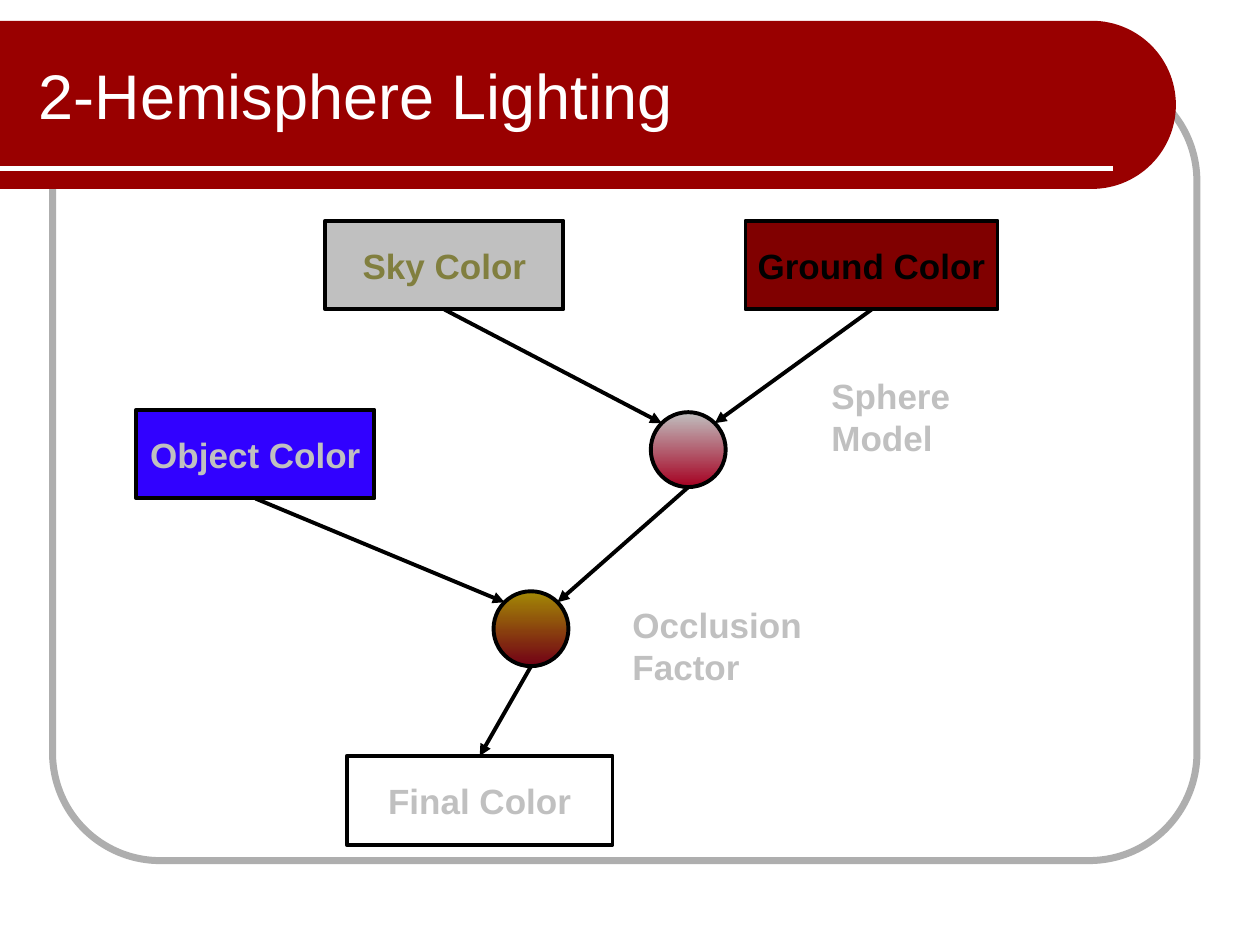
from math import cos, pi, sin, sqrt

from lxml.etree import SubElement
from pptx import Presentation
from pptx.dml.color import RGBColor
from pptx.enum.shapes import MSO_CONNECTOR as Connector, MSO_SHAPE as Shape
from pptx.enum.text import MSO_ANCHOR as Anchor, PP_ALIGN as Align
from pptx.oxml.ns import qn
from pptx.util import Cm, Pt

# Content; all lengths in centimetres
TITLE = "2-Hemisphere Lighting"
BOX_HEIGHT, NODE_SIZE = 1.79, 1.51
BOXES = {  # text, left, top, width, fill, text colour
    "sky": ("Sky Color", 6.56, 4.45, 4.8, "C0C0C0", "817F3F"),
    "final": ("Final Color", 6.99, 15.24, 5.36, "FFFFFF", "C0C0C0"),
    "ground": ("Ground Color", 15.03, 4.45, 5.08, "800000", "000000"),
    "object": ("Object Color", 2.75, 8.26, 4.8, "3101FF", "C0C0C0"),
}
NODES = {  # left, top, upper colour, lower colour
    "sphere": (13.12, 8.31, "C0C0C0", "A50021"),
    "occlusion": (9.95, 11.92, "A38905", "720016"),
}
LABELS = [  # text, left, top, width
    ("Sphere Model", 16.51, 7.42, 4.95),
    ("Occlusion Factor", 12.5, 12.04, 5.89),
]
ARROWS = [  # from, to, side of the target
    ("sky", "sphere", "left"),
    ("ground", "sphere", "right"),
    ("object", "occlusion", "left"),
    ("sphere", "occlusion", "right"),
    ("occlusion", "final", "middle"),
]


def color(value):
    return RGBColor.from_string(value)


def outline(shape, value, width):
    shape.line.color.rgb = color(value)
    shape.line.width = Pt(width)


def add_figure(kind, left, top, width, height):
    shape = page.shapes.add_shape(kind, Cm(left), Cm(top), Cm(width), Cm(height))
    shape.shadow.inherit = False
    return shape


def add_line(start, end, value, width):
    line = page.shapes.add_connector(Connector.STRAIGHT, *map(Cm, start + end))
    outline(line, value, width)
    SubElement(line._element.spPr, qn("a:effectLst"))
    return line


def write(box, text, size, value, bold=False, align=Align.LEFT):
    para = box.text_frame.paragraphs[0]
    para.alignment = align
    span = para.add_run()
    span.text = text
    span.font.name, span.font.size, span.font.bold = "Arial", Pt(size), bold
    span.font.color.rgb = color(value)


def bounds(name):
    if name in BOXES:
        _, left, top, width, *_ = BOXES[name]
        return left, top, width, BOX_HEIGHT
    left, top, *_ = NODES[name]
    return left, top, NODE_SIZE, NODE_SIZE


def bottom_point(name):
    left, top, width, height = bounds(name)
    return left + width / 2, top + height


def entry_point(name, side):
    left, top, width, _ = bounds(name)
    if side == "middle":
        return left + width / 2, top
    inset = width / 2 * (1 - sqrt(0.5))  # diagonal point of the circle
    return (left + inset if side == "left" else left + width - inset), top + inset


deck = Presentation()
deck.slide_width, deck.slide_height = Cm(25.4), Cm(19.05)
page = deck.slides.add_slide(deck.slide_layouts[5])

# Frame
frame = add_figure(Shape.ROUNDED_RECTANGLE, 1.06, 1.48, 23.07, 15.87)
frame.adjustments[0] = 0.137
frame.fill.background()
outline(frame, "AEAEAE", 4)

# Title band with a round right end
band_top, band_height, band_straight = 0.42, 3.39, 22.01
radius, steps = band_height / 2, 60
arc = [(Cm(band_straight + radius * sin(pi * i / steps)),
        Cm(band_top + radius - radius * cos(pi * i / steps)))
       for i in range(steps + 1)]
builder = page.shapes.build_freeform(0, Cm(band_top))
builder.add_line_segments(arc + [(0, Cm(band_top + band_height))], close=True)
band = builder.convert_to_shape()
band.shadow.inherit = False
band.fill.solid()
band.fill.fore_color.rgb = color("990000")
band.line.fill.background()
add_line((0, 3.39), (22.44, 3.39), "FFFFFF", 3)

# Title, moved in front of the band
title = page.shapes.title
title.left, title.top, title.width, title.height = map(Cm, (0.53, 0.64, 19.79, 2.54))
title.text_frame.vertical_anchor = Anchor.MIDDLE
title.text_frame.word_wrap = True
write(title, TITLE, 36, "FFFFFF")
title._element.getparent().append(title._element)

# Colour boxes
for name, (text, *_, fill, text_color) in BOXES.items():
    box = add_figure(Shape.RECTANGLE, *bounds(name))
    box.fill.solid()
    box.fill.fore_color.rgb = color(fill)
    outline(box, "000000", 2.25)
    box.text_frame.word_wrap = False
    box.text_frame.vertical_anchor = Anchor.MIDDLE
    write(box, text, 20, text_color, True, Align.CENTER)

# Blend nodes
for name, (_, _, *shades) in NODES.items():
    node = add_figure(Shape.OVAL, *bounds(name))
    node.fill.gradient()
    node.fill.gradient_angle = 270
    for stop, position, shade in zip(node.fill.gradient_stops, (0, 1), shades):
        stop.position = position
        stop.color.rgb = color(shade)
    outline(node, "000000", 2.25)

# Arrows
for source, target, side in ARROWS:
    arrow = add_line(bottom_point(source), entry_point(target, side), "000000", 2.25)
    SubElement(arrow.line._get_or_add_ln(), qn("a:tailEnd"), type="triangle")

# Labels
for text, left, top, width in LABELS:
    label = page.shapes.add_textbox(Cm(left), Cm(top), Cm(width), Cm(1.96))
    label.text_frame.word_wrap = True
    write(label, text, 20, "C0C0C0", True)

deck.save("out.pptx")
